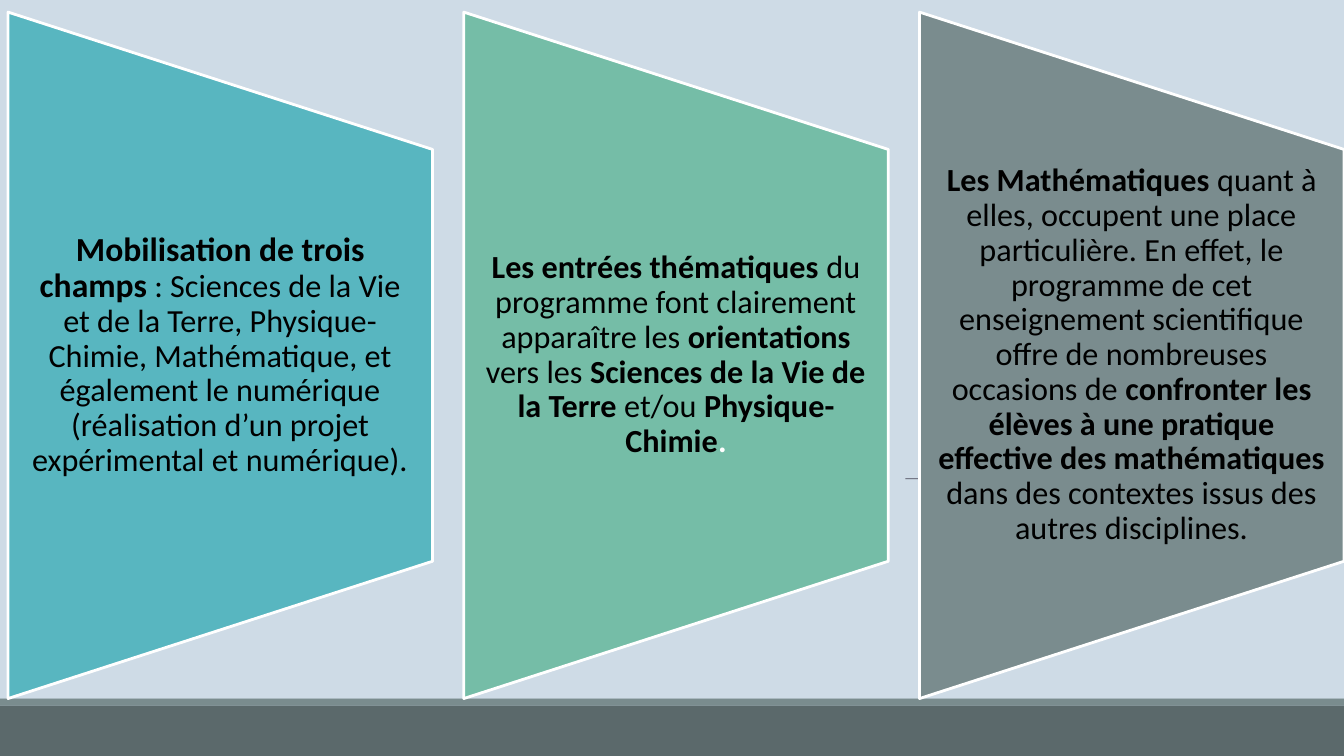
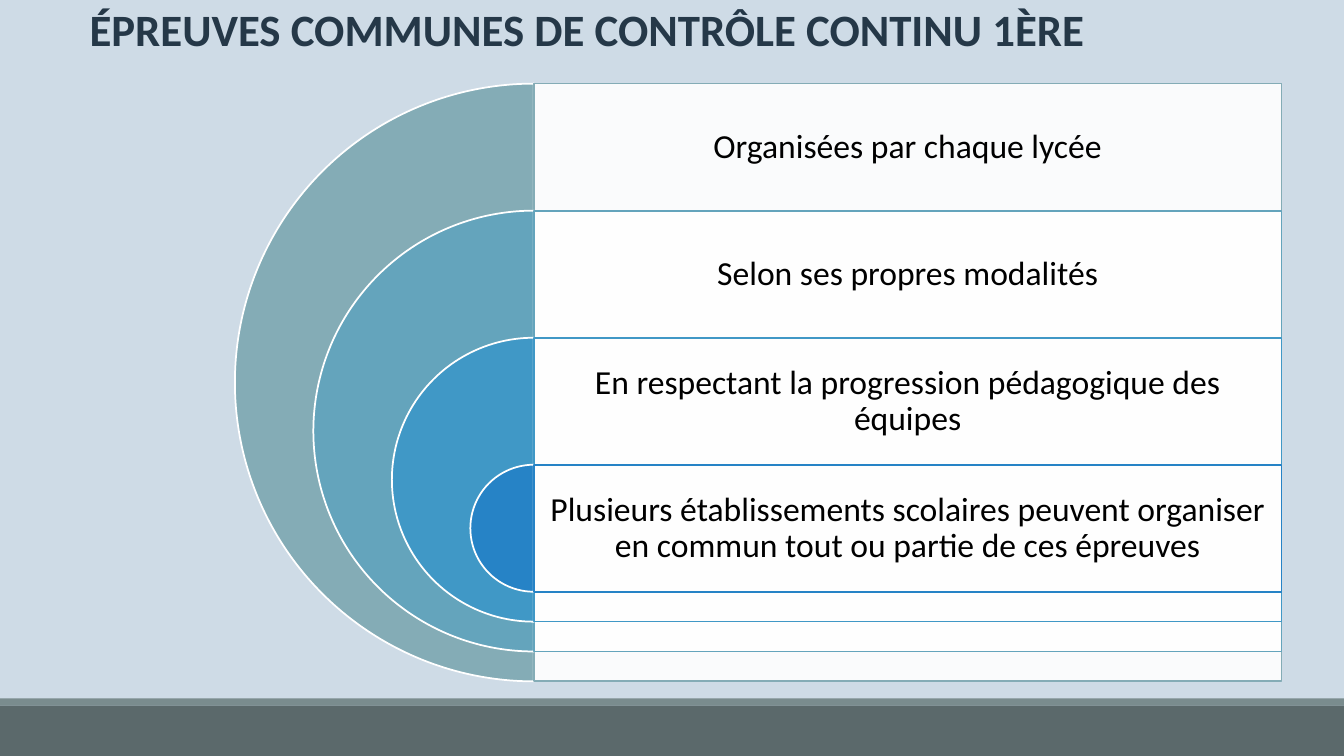
from collections import namedtuple

from lxml import etree
from pptx import Presentation
from pptx.dml.color import RGBColor
from pptx.enum.shapes import MSO_CONNECTOR, MSO_SHAPE as SHAPE
from pptx.enum.text import MSO_ANCHOR as ANCHOR, PP_ALIGN as ALIGN
from pptx.oxml.ns import qn
from pptx.util import Inches, Pt

W, H = 13.33, 7.5
FONT = "Calibri"
COLORS = {
    "background": "CEDBE6", "band": "5B696B", "stripe": "7A8C8E",
    "title": "253848", "text": "000000", "white": "FFFFFF", "rule": "373545",
    "teal": "58B6C0", "green": "75BDA7", "grey": "7A8C8E",
    "ring1": "84ACB6", "ring2": "64A4BC", "ring3": "4098C6", "ring4": "2683C6",
}
Box = namedtuple("Box", "x y w h")

CONTENT = Box(0, 0, W, 6.93)
STRIPE = Box(0, 6.93, W, 0.07)
BAND = Box(0, 7, W, 0.5)

# Each run: text, bold, then optionally size and colour
PANELS = [
    ("teal", [
        ("Mobilisation de trois champs", True, 24),
        (" : Sciences de la Vie et de la Terre, Physique-Chimie, Mathématique, "
         "et également le numérique (réalisation d’un projet expérimental et "
         "numérique).", False),
    ]),
    ("green", [
        ("Les entrées thématiques", True),
        (" du programme font clairement apparaître les ", False),
        ("orientations ", True),
        ("vers les ", False),
        ("Sciences de la Vie de la Terre ", True),
        ("et/ou ", False),
        ("Physique-Chimie", True),
        (".", True, 23, "white"),
    ]),
    ("grey", [
        ("Les Mathématiques ", True),
        ("quant à elles, occupent une place particulière. En effet, le programme "
         "de cet enseignement scientifique offre de nombreuses occasions de ", False),
        ("confronter les élèves à une pratique effective des mathématiques ", True),
        ("dans des contextes issus des autres disciplines.", False),
    ]),
]
RINGS = [
    ("ring1", "Organisées par chaque lycée"),
    ("ring2", "Selon ses propres modalités"),
    ("ring3", "En respectant la progression pédagogique des équipes"),
    ("ring4", "Plusieurs établissements scolaires peuvent organiser en commun "
              "tout ou partie de ces épreuves"),
]


def rgb(name):
    return RGBColor.from_string(COLORS[name])


def set_alpha(fill_parent, percent):
    color = fill_parent.find(qn("a:solidFill"))[0]
    etree.SubElement(color, qn("a:alpha")).set("val", str(percent * 1000))


def add_shape(slide, kind, box, fill, line=None, width=1.25):
    sp = slide.shapes.add_shape(kind, *map(Inches, box))
    sp.shadow.inherit = False
    sp.fill.solid()
    sp.fill.fore_color.rgb = rgb(fill)
    if line:
        sp.line.color.rgb = rgb(line)
        sp.line.width = Pt(width)
    else:
        sp.line.fill.background()
    return sp


def add_text(slide, box, runs, size, color="text", align=ALIGN.CENTER,
             anchor=ANCHOR.MIDDLE, insets=(0.1, 0.1)):
    tf = slide.shapes.add_textbox(*map(Inches, box)).text_frame
    tf.word_wrap = True
    tf.vertical_anchor = anchor
    tf.margin_left = tf.margin_right = Inches(insets[0])
    tf.margin_top = tf.margin_bottom = Inches(insets[1])
    p = tf.paragraphs[0]
    p.alignment = align
    p.line_spacing = 0.9
    p.font.name = FONT
    for text, bold, *own in runs:
        run_size, run_color = own + [size, color][len(own):]
        r = p.add_run()
        r.text = text
        r.font.name = FONT
        r.font.bold = bold
        r.font.size = Pt(run_size)
        r.font.color.rgb = rgb(run_color)


def add_title(slide, box, text):
    add_text(slide, box, [(text, True)], 32, "title", ALIGN.LEFT,
             ANCHOR.TOP, (0.1, 0.05))


def add_base_slide(prs):
    """Add a blank slide with the shared background and bottom bands."""
    slide = prs.slides.add_slide(prs.slide_layouts[6])
    slide.background.fill.solid()
    slide.background.fill.fore_color.rgb = rgb("background")
    add_shape(slide, SHAPE.RECTANGLE, STRIPE, "stripe")
    add_shape(slide, SHAPE.RECTANGLE, BAND, "band")
    return slide


def add_rule(slide, x, y, length):
    line = slide.shapes.add_connector(
        MSO_CONNECTOR.STRAIGHT, *map(Inches, (x, y, x + length, y)))
    line.line.color.rgb = rgb("rule")
    line.line.width = Pt(0.5)
    sp_pr = line._element.spPr
    set_alpha(sp_pr.find(qn("a:ln")), 90)
    etree.SubElement(sp_pr, qn("a:effectLst"))


def add_panel(slide, box, fill, runs):
    """Add a trapezoid, tall side left, with text in its middle three fifths."""
    x, y, w, h = box
    unrotated = Box(x + (w - h) / 2, y + (h - w) / 2, h, w)
    sp = add_shape(slide, SHAPE.FLOWCHART_MANUAL_OPERATION, unrotated,
                   fill, "white", 2)
    sp.rotation = 270
    add_text(slide, Box(x, y + h / 5, w, h * 3 / 5), runs, 23, insets=(0.16, 0))


def add_panels(slide, box, gap):
    n = len(PANELS)
    w = (box.w - gap * (n - 1)) / n
    for i, (fill, runs) in enumerate(PANELS):
        add_panel(slide, Box(box.x + i * (w + gap), box.y, w, box.h), fill, runs)


def add_rings(slide, box):
    """Add nested half discs, each with a row opening to the right."""
    row_h, bottom_step = box.h * 0.2125, box.h * 0.05
    center = box.x + box.h / 2
    row_w = box.x + box.w - center
    for i, (color, text) in enumerate(RINGS):
        top = box.y + i * row_h
        size = box.h - i * (row_h + bottom_step)
        pie = add_shape(slide, SHAPE.PIE, Box(center - size / 2, top, size, size),
                        color, "white")
        pie.adjustments[0], pie.adjustments[1] = 54, 162
        row = add_shape(slide, SHAPE.RECTANGLE, Box(center, top, row_w, size),
                        "white", color)
        set_alpha(row._element.spPr, 90)
        add_text(slide, Box(center, top, row_w, row_h), [(text, False)], 24)


def build_fields_slide(prs):
    slide = add_base_slide(prs)
    add_shape(slide, SHAPE.RECTANGLE, CONTENT, "background")
    add_rule(slide, 8.98, 4.75, 3.5)
    add_panels(slide, Box(0.08, 0.12, 13.25, 6.81), 0.31)


def build_exams_slide(prs):
    slide = add_base_slide(prs)
    add_rings(slide, Box(2.33, 0.83, 10.38, 5.93))
    add_title(slide, Box(0.79, 0.03, 11.33, 1.23),
              "ÉPREUVES COMMUNES DE CONTRÔLE CONTINU 1ÈRE")


def main():
    prs = Presentation()
    prs.slide_width, prs.slide_height = Inches(W), Inches(H)
    build_fields_slide(prs)
    build_exams_slide(prs)
    prs.save("out.pptx")


if __name__ == "__main__":
    main()
